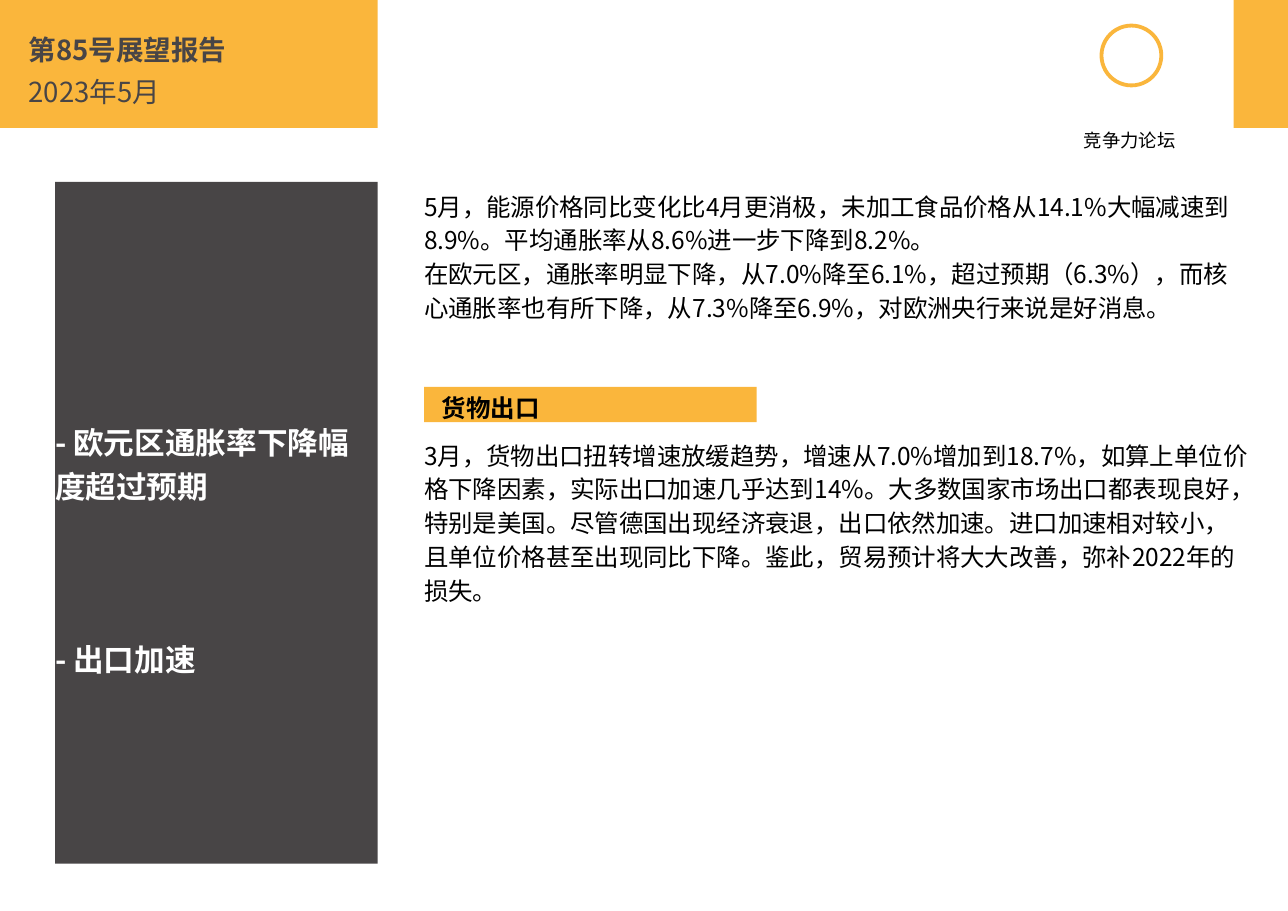
from lxml import etree
from pptx import Presentation
from pptx.dml.color import RGBColor
from pptx.enum.shapes import MSO_SHAPE
from pptx.enum.text import MSO_ANCHOR, MSO_AUTO_SIZE, PP_ALIGN
from pptx.oxml.ns import qn
from pptx.util import Cm, Pt

RECTANGLE, OVAL = MSO_SHAPE.RECTANGLE, MSO_SHAPE.OVAL
TOP, LEFT, NO_FIT = MSO_ANCHOR.TOP, PP_ALIGN.LEFT, MSO_AUTO_SIZE.NONE
YELLOW = RGBColor(0xFA, 0xB6, 0x3C)
GREY = RGBColor(0x48, 0x45, 0x46)
BLACK = RGBColor(0, 0, 0)
WHITE = RGBColor(0xFF, 0xFF, 0xFF)
FONT = "Noto Sans CJK SC"


def place(shape, left, top, width, height, fill=None):
    shape.left, shape.top = Cm(left), Cm(top)
    shape.width, shape.height = Cm(width), Cm(height)
    if fill is not None:
        shape.fill.solid()
        shape.fill.fore_color.rgb = fill


def write(shape, lines, size, color, bold, insets, line_spacing=1.0, gap=0):
    frame = shape.text_frame
    frame.text = "\n".join(lines)
    frame.word_wrap = True
    frame.auto_size = NO_FIT
    frame.vertical_anchor = TOP
    frame.margin_left, frame.margin_top, frame.margin_right, frame.margin_bottom = map(Cm, insets)
    for number, paragraph in enumerate(frame.paragraphs):
        paragraph.alignment = LEFT
        paragraph.line_spacing = line_spacing
        paragraph.space_before = Pt(gap if number else 0)
        for run in paragraph.runs:
            run.font.size = Pt(size)
            run.font.bold = bold
            run.font.color.rgb = color
            run.font.name = FONT
            etree.SubElement(run.font._element, qn("a:ea"), typeface=FONT)


prs = Presentation()
prs.slide_width, prs.slide_height = Cm(29.7), Cm(21)
slide = prs.slides.add_slide(prs.slide_layouts[1])
shapes = slide.shapes

# Header band with report number and date
report_header = shapes.title
place(report_header, 0, 0, 8.71, 2.95, YELLOW)
write(report_header, ["第85号展望报告", "2023年5月"], 18, GREY, True, (0.66, 0.76, 0, 0), gap=6)
report_header.text_frame.paragraphs[1].runs[0].font.bold = False

# Key points in the dark side panel
key_points = slide.placeholders[1]
place(key_points, 1.27, 4.19, 7.44, 15.72, GREY)
write(key_points, ["- 欧元区通胀率下降幅度超过预期", "- 出口加速"],
      20, WHITE, True, (0, 5.44, 0, 0), 1.18, gap=85)
for paragraph in key_points.text_frame.paragraphs:
    properties = paragraph._p.get_or_add_pPr()
    properties.set("marL", "0")
    properties.set("indent", "0")
    etree.SubElement(properties, qn("a:buNone"))

# Right corner band
corner_band = shapes.add_shape(RECTANGLE, 0, 0, 0, 0)
place(corner_band, 28.45, 0, 1.25, 2.95, YELLOW)

# Forum emblem and name
emblem = shapes.add_shape(OVAL, 0, 0, 0, 0)
place(emblem, 25.4, 0.59, 1.38, 1.38)
emblem.fill.background()
forum_name = shapes.add_textbox(0, 0, 0, 0)
place(forum_name, 24.59, 2.84, 2.92, 0.76)
write(forum_name, ["竞争力论坛"], 12, BLACK, False, (0.4, 0.13, 0.13, 0.13))

# Section heading
exports_heading = shapes.add_shape(RECTANGLE, 0, 0, 0, 0)
place(exports_heading, 9.78, 8.92, 7.67, 0.81, YELLOW)
write(exports_heading, ["货物出口"], 16, BLACK, True, (0.41, 0.13, 0, 0))

for shape in (corner_band, emblem, exports_heading):
    shape.shadow.inherit = False
    shape.line.fill.background()
emblem.line.color.rgb = YELLOW
emblem.line.width = Pt(2.5)

# Inflation and export commentary
inflation_lines = [
    "5月，能源价格同比变化比4月更消极，未加工食品价格从14.1%大幅减速到8.9%。平均通胀率从8.6%进一步下降到8.2%。",
    "在欧元区，通胀率明显下降，从7.0%降至6.1%，超过预期（6.3%），而核心通胀率也有所下降，从7.3%降至6.9%，对欧洲央行来说是好消息。",
]
exports_lines = [
    "3月，货物出口扭转增速放缓趋势，增速从7.0%增加到18.7%，如算上单位价格下降因素，实际出口加速几乎达到14%。"
    "大多数国家市场出口都表现良好，特别是美国。尽管德国出现经济衰退，出口依然加速。"
    "进口加速相对较小，且单位价格甚至出现同比下降。鉴此，贸易预计将大大改善，弥补2022年的损失。",
]
for lines, top, width, height in (
    (inflation_lines, 4.19, 19.13, 4.06),
    (exports_lines, 9.93, 19.51, 4.85),
):
    commentary = shapes.add_textbox(0, 0, 0, 0)
    place(commentary, 9.53, top, width, height)
    write(commentary, lines, 16, BLACK, False, (0.25, 0.13, 0.25, 0.13), 1.15)

prs.save("out.pptx")
